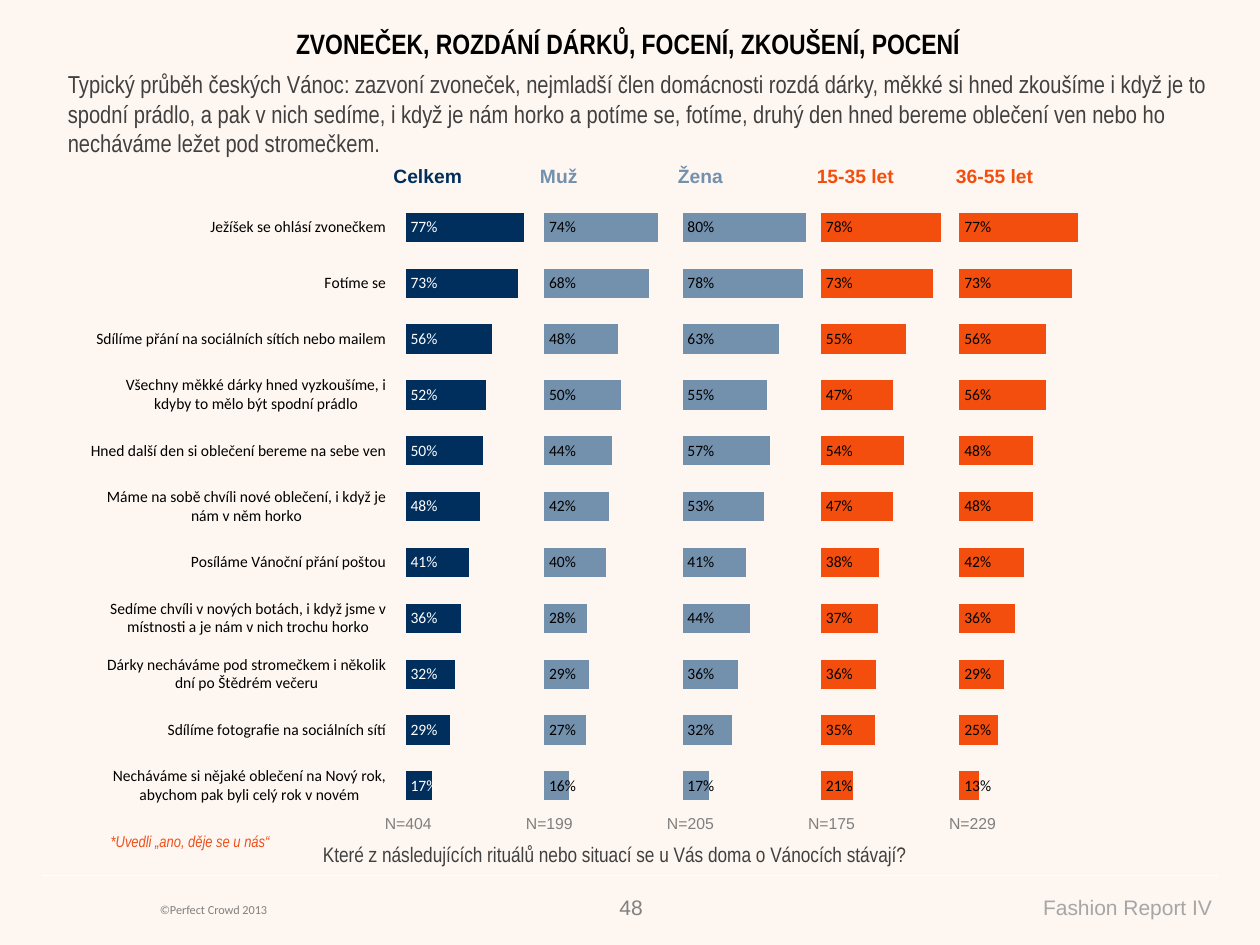
from lxml import etree
from pptx import Presentation
from pptx.chart.data import CategoryChartData
from pptx.dml.color import RGBColor
from pptx.enum.chart import XL_CHART_TYPE as ChartType, XL_LABEL_POSITION as LabelPos
from pptx.enum.chart import XL_TICK_LABEL_POSITION as TickLabelPos, XL_TICK_MARK as TickMark
from pptx.enum.shapes import MSO_CONNECTOR as Connector
from pptx.enum.text import MSO_ANCHOR as Anchor, MSO_AUTO_SIZE as AutoSize, PP_ALIGN as Align
from pptx.oxml.ns import qn
from pptx.util import Inches, Pt

COLORS = {
    "background": "FEF6F0", "black": "000000", "white": "FFFFFF", "text": "404040",
    "navy": "002F5E", "steel": "7391AD", "orange": "F34E0D", "note": "EF4F1D",
    "sample": "7F7F7F", "footer": "808080", "report": "A6A6A6",
}
NO_TABLE_STYLE = "{2D5ABB26-0587-4C30-8999-92F81FD0307C}"

RITUALS = [
    "Ježíšek se ohlásí zvonečkem",
    "Fotíme se",
    "Sdílíme přání na sociálních sítích nebo mailem",
    "Všechny měkké dárky hned vyzkoušíme, i kdyby to mělo být spodní prádlo",
    "Hned další den si oblečení bereme na sebe ven",
    "Máme na sobě chvíli nové oblečení, i když je nám v něm horko",
    "Posíláme Vánoční přání poštou",
    "Sedíme chvíli v nových botách, i když jsme v místnosti a je nám v nich trochu horko",
    "Dárky necháváme pod stromečkem i několik dní po Štědrém večeru",
    "Sdílíme fotografie na sociálních sítí",
    "Necháváme si nějaké oblečení na Nový rok, abychom pak byli celý rok v novém",
]
# Group, colour, sample size, header width, percentages
GROUPS = [
    ("Celkem", "navy", 404, 1.07, [77, 73, 56, 52, 50, 48, 41, 36, 32, 29, 17]),
    ("Muž", "steel", 199, 1.01, [74, 68, 48, 50, 44, 42, 40, 28, 29, 27, 16]),
    ("Žena", "steel", 205, 1.24, [80, 78, 63, 55, 57, 53, 41, 44, 36, 32, 17]),
    ("15-35 let", "orange", 175, 1.22, [78, 73, 55, 47, 54, 47, 38, 37, 36, 35, 21]),
    ("36-55 let", "orange", 229, 0.99, [77, 73, 56, 56, 48, 48, 42, 36, 29, 25, 13]),
]
GROUP_PITCH = 90  # each group's bars start this many percent after the last


def rgb(name):
    return RGBColor.from_string(COLORS[name])


def style_font(font, size, face, color, bold=False, italic=False):
    font.size, font.name = Pt(size), face
    font.bold, font.italic = bold, italic
    font.color.rgb = rgb(color)


def write(frame, text, size, face, color, align=Align.LEFT, **style):
    frame.text = text
    paragraph = frame.paragraphs[0]
    paragraph.alignment = align
    style_font(paragraph.runs[0].font, size, face, color, **style)


def add_text(slide, box, *text_style, wrap=True, **style):
    frame = slide.shapes.add_textbox(*map(Inches, box)).text_frame
    frame.word_wrap = wrap
    write(frame, *text_style, **style)


def add_title(slide, box):
    title = slide.shapes.title
    title.left, title.top, title.width, title.height = map(Inches, box)
    title.text_frame.auto_size = AutoSize.NONE
    write(title.text_frame, "ZVONEČEK, ROZDÁNÍ DÁRKŮ, FOCENÍ, ZKOUŠENÍ, POCENÍ",
          16, "Arial Narrow", "black", Align.CENTER, bold=True)


def add_label_row(slide, box, widths, labels, colors, size, bold=False):
    """A one-row table without fill or borders."""
    table = slide.shapes.add_table(1, len(labels), *map(Inches, box)).table
    table.first_row = table.horz_banding = False
    table._tbl.tblPr.find(qn("a:tableStyleId")).text = NO_TABLE_STYLE
    table.rows[0].height = Inches(box[3])
    for column, width, cell, label, color in zip(
            table.columns, widths, table.rows[0].cells, labels, colors):
        column.width = Inches(width)
        cell.fill.background()
        cell.vertical_anchor = Anchor.MIDDLE
        cell.margin_left = cell.margin_right = cell.margin_top = cell.margin_bottom = 0
        write(cell.text_frame, label, size, "Arial", color, Align.CENTER, bold=bold)


def set_plot_layout(chart, x, y, width, height):
    plot_area = chart._chartSpace.chart.plotArea
    layout = plot_area.find(qn("c:layout"))
    if layout is None:
        layout = etree.Element(qn("c:layout"))
        plot_area.insert(0, layout)
    manual = etree.SubElement(layout, qn("c:manualLayout"))
    for tag, value in [("layoutTarget", "inner"), ("xMode", "edge"), ("yMode", "edge"),
                       ("x", x), ("y", y), ("w", width), ("h", height)]:
        etree.SubElement(manual, qn("c:" + tag)).set("val", str(value))


def add_ritual_chart(slide, box):
    # Unfilled spacer series keep the groups at an equal pitch
    data = CategoryChartData(number_format="0%")
    data.categories = RITUALS
    for index, (group, _, _, _, percents) in enumerate(GROUPS):
        if index:
            previous = GROUPS[index - 1][4]
            data.add_series(f"Series {2 * index}",
                            [(GROUP_PITCH - value) / 100 for value in previous])
        data.add_series(f"Series {2 * index + 1}", [value / 100 for value in percents])
    chart = slide.shapes.add_chart(ChartType.BAR_STACKED, *map(Inches, box), data).chart
    chart.has_legend = chart.has_title = False
    style_font(chart.font, 9, "Calibri", "black")
    set_plot_layout(chart, 0.27, 0.07, 0.72, 0.89)

    # Axes
    rituals, values = chart.category_axis, chart.value_axis
    rituals.reverse_order = True
    rituals.has_major_gridlines = False
    rituals.major_tick_mark = TickMark.OUTSIDE
    rituals.tick_label_position = TickLabelPos.LOW
    rituals.format.line.fill.background()
    values.minimum_scale, values.maximum_scale = -0.05, 5
    values.has_major_gridlines = False
    values.visible = False

    # Bars and their labels
    plot = chart.plots[0]
    plot.gap_width, plot.overlap = 91, 100
    plot.vary_by_categories = False
    for index, series in enumerate(plot.series):
        series.invert_if_negative = False
        if index % 2:
            series.format.fill.background()
            continue
        color = GROUPS[index // 2][1]
        series.format.fill.solid()
        series.format.fill.fore_color.rgb = rgb(color)
        labels = series.data_labels
        labels.show_value = True
        labels.position = LabelPos.INSIDE_BASE
        labels.number_format, labels.number_format_is_linked = "0%", False
        style_font(labels.font, 9, "Calibri", "white" if color == "navy" else "black")


def add_footer(slide, left, top, width):
    rule = slide.shapes.add_connector(
        Connector.STRAIGHT, Inches(left), Inches(top), Inches(left + width), Inches(top))
    rule.line.color.rgb, rule.line.width = rgb("white"), Pt(0.75)
    etree.SubElement(rule._element.spPr, qn("a:effectLst"))
    add_text(slide, (1.17, top + 0.16, 2.91, 0.22), "©Perfect Crowd 2013",
             7, "Calibri", "footer")
    add_text(slide, (4.79, top + 0.1, 0.41, 0.3), "48", 12, "Arial", "footer", Align.RIGHT)
    add_text(slide, (6.01, top + 0.1, 3.71, 0.3), "Fashion Report IV",
             12, "Arial", "report", Align.RIGHT)


def main():
    deck = Presentation()
    deck.slide_width, deck.slide_height = Inches(10), Inches(7.5)
    slide = deck.slides.add_slide(deck.slide_layouts[5])
    slide.background.fill.solid()
    slide.background.fill.fore_color.rgb = rgb("background")

    add_footer(slide, 0.33, 6.95, 9.34)
    add_ritual_chart(slide, (0.72, 1.2, 8.69, 5.48))
    add_title(slide, (0.56, 0.16, 8.85, 0.37))
    add_text(slide, (0.44, 0.5, 9.36, 0.89),
             "Typický průběh českých Vánoc: zazvoní zvoneček, nejmladší člen domácnosti "
             "rozdá dárky, měkké si hned zkoušíme i když je to spodní prádlo, a pak v nich "
             "sedíme, i když je nám horko a potíme se, fotíme, druhý den hned bereme oblečení "
             "ven nebo ho necháváme ležet pod stromečkem.", 14, "Arial Narrow", "text")

    # Group names above the bars, sample sizes below
    names, colors, samples, widths, _ = zip(*GROUPS)
    add_label_row(slide, (2.68, 6.43, 5.62, 0.22), [1.12] * len(GROUPS),
                  [f"N={sample}" for sample in samples], ["sample"] * len(GROUPS), 9)
    add_label_row(slide, (2.86, 1.29, 5.54, 0.22), widths, names, colors, 11, bold=True)

    # Survey question and footnote
    add_text(slide, (0.35, 6.63, 9.06, 0.3),
             "Které z následujících rituálů nebo situací se u Vás doma o Vánocích stávají?",
             12, "Arial Narrow", "text", Align.CENTER)
    add_text(slide, (0.78, 6.55, 1.48, 0.25), "*Uvedli „ano, děje se u nás“",
             9, "Arial Narrow", "note", wrap=False, italic=True)
    deck.save("out.pptx")


if __name__ == "__main__":
    main()
